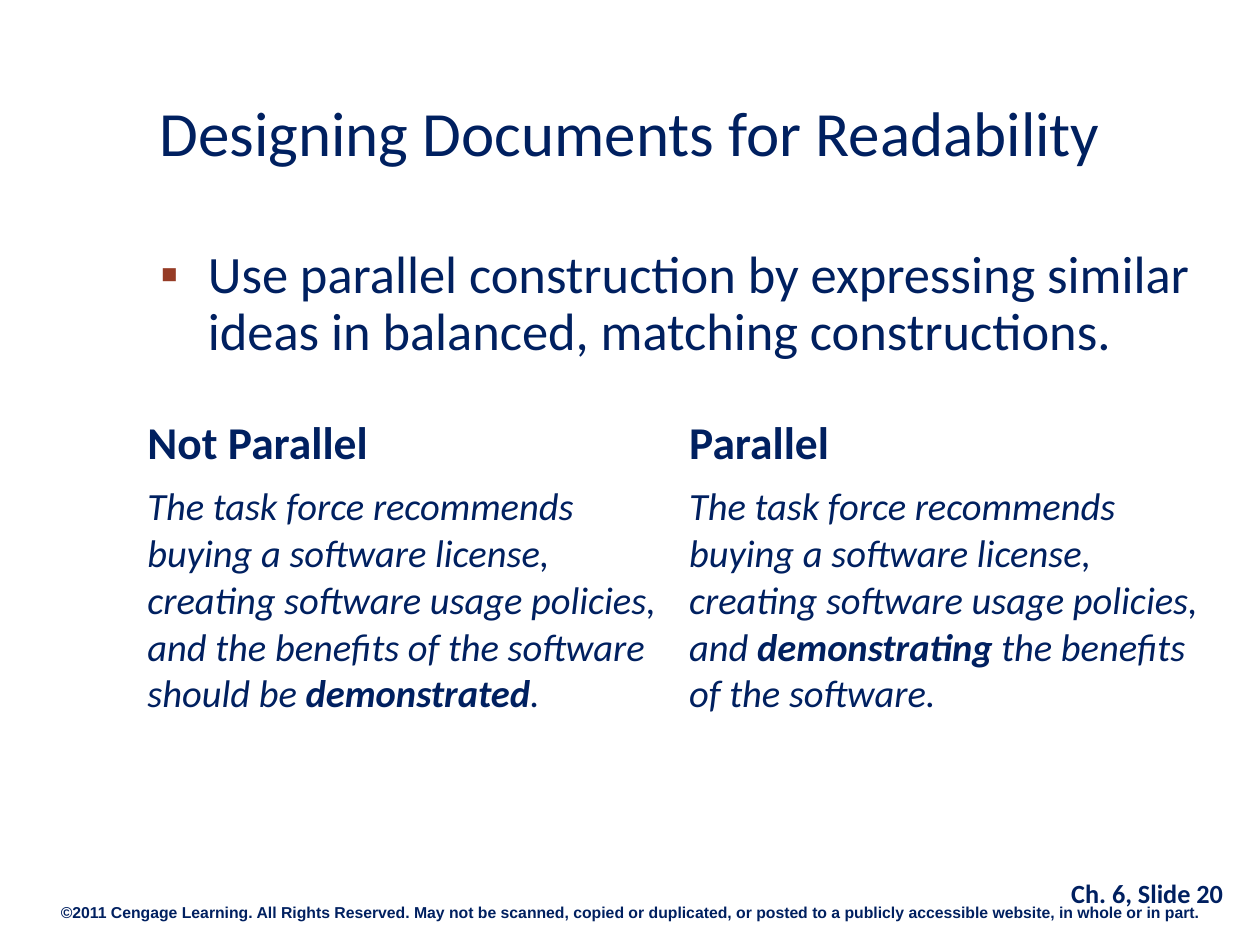
from lxml import etree
from pptx import Presentation
from pptx.dml.color import RGBColor
from pptx.enum.text import MSO_ANCHOR, MSO_AUTO_SIZE, PP_ALIGN
from pptx.oxml.ns import qn
from pptx.util import Inches, Pt

CENTER, LEFT = PP_ALIGN.CENTER, PP_ALIGN.LEFT
TOP, MIDDLE = MSO_ANCHOR.TOP, MSO_ANCHOR.MIDDLE
NO_FIT = MSO_AUTO_SIZE.NONE
NAVY, RUST = "002060", "963C26"

# Content
TITLE = "Designing Documents for Readability"
POINT = ("Use parallel construction by expressing similar ideas in balanced, "
         "matching constructions.")
START = "The task force recommends buying a software license, creating software usage policies, and "
# Each example: heading, then (text, bold) runs
EXAMPLES = [
    ("Not Parallel", [(START + "the benefits of the software should be ", False),
                      ("demonstrated", True), (".", False)]),
    ("Parallel", [(START, False), ("demonstrating", True),
                  (" the benefits of the software.", False)]),
]
# Footers: text, box, size, font
FOOTERS = [
    ("©2011 Cengage Learning. All Rights Reserved. May not be scanned, copied or duplicated, "
     "or posted to a publicly accessible website, in whole or in part.",
     (0, 7.17, 10, 0.19), 9, "Arial"),
    ("Ch. 6, Slide 20", (8.19, 7, 1.83, 0.33), 15, "Calibri"),
]
TABLE_ROWS, ROW_H, COL_W = 6, 0.41, 4.3


def color(hex_code):
    return RGBColor.from_string(hex_code)


def add_run(p, text, size, font="Calibri", bold=False, italic=False):
    r = p.add_run()
    r.text = text
    r.font.size, r.font.name = Pt(size), font
    r.font.bold, r.font.italic = bold, italic
    r.font.color.rgb = color(NAVY)


def place(sp, box):
    sp.left, sp.top, sp.width, sp.height = map(Inches, box)


def first_paragraph(tf, align, spacing, anchor=TOP):
    tf.word_wrap = True
    tf.auto_size = NO_FIT
    tf.vertical_anchor = anchor
    p = tf.paragraphs[0]
    p.alignment, p.line_spacing = align, spacing
    p.space_before = Pt(0)
    return p


def add_bullet(p, char, hex_code, indent):
    pPr = p._p.get_or_add_pPr()
    pPr.set("marL", str(Inches(indent)))
    pPr.set("indent", str(-Inches(indent)))
    clr = etree.SubElement(pPr, qn("a:buClr"))
    etree.SubElement(clr, qn("a:srgbClr"), val=hex_code)
    etree.SubElement(pPr, qn("a:buFont"), typeface="Arial")
    etree.SubElement(pPr, qn("a:buChar"), char=char)


prs = Presentation()
prs.slide_width, prs.slide_height = Inches(10), Inches(7.5)
s = prs.slides.add_slide(prs.slide_layouts[1])

# Footers
for text, box, size, font in FOOTERS:
    sp = s.shapes.add_textbox(*map(Inches, box))
    p = first_paragraph(sp.text_frame, CENTER, 0.6)
    add_run(p, text, size, font, bold=True)

# Title and bullet
title, body = s.shapes.title, s.placeholders[1]
place(title, (0.25, 0.58, 9.5, 1))
add_run(first_paragraph(title.text_frame, CENTER, 0.9, MIDDLE), TITLE, 36)

place(body, (1.17, 1.92, 8.58, 4.67))
p = first_paragraph(body.text_frame, LEFT, 0.9)
add_bullet(p, "▪", RUST, 0.38)
add_run(p, POINT, 30)

# Comparison table, without banding or fills
frame = s.shapes.add_table(TABLE_ROWS, len(EXAMPLES), Inches(1.07), Inches(3.25),
                           Inches(COL_W * len(EXAMPLES)), Inches(ROW_H * TABLE_ROWS))
table = frame.table
table.first_row = table.horz_banding = False
table._tbl.tblPr.find(qn("a:tableStyleId")).text = "{2D5ABB26-0587-4C30-8999-92F81FD0307C}"
for cell in table.iter_cells():
    cell.fill.background()

for col, (heading, runs) in enumerate(EXAMPLES):
    add_run(table.cell(0, col).text_frame.paragraphs[0], heading, 26, bold=True)
    p = table.cell(1, col).text_frame.paragraphs[0]
    for text, bold in runs:
        add_run(p, text, 22, bold=bold, italic=True)

prs.save("out.pptx")
